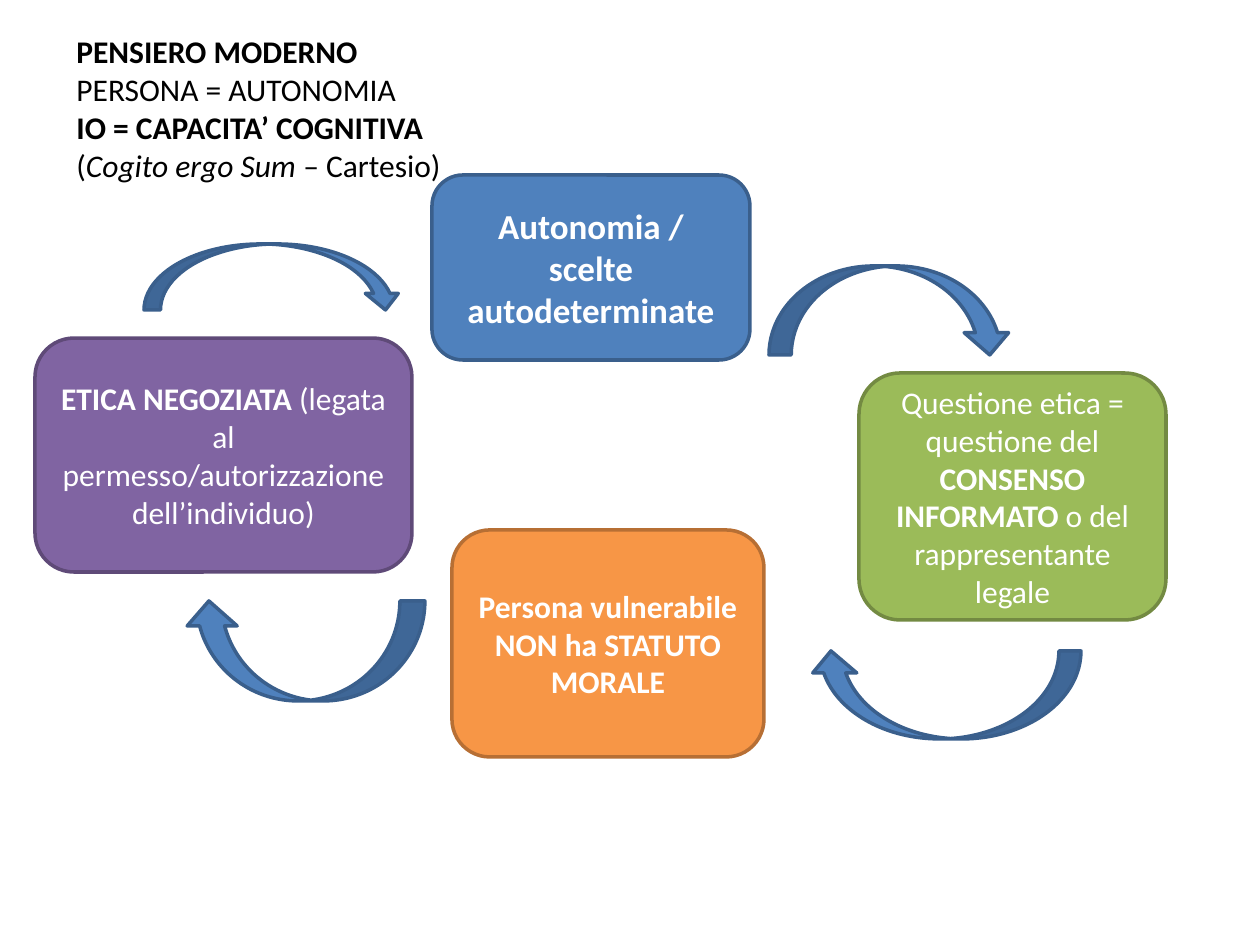
from pptx import Presentation
from pptx.dml.color import RGBColor
from pptx.enum.shapes import MSO_SHAPE as Shape
from pptx.enum.text import MSO_ANCHOR as Anchor, MSO_AUTO_SIZE as AutoSize, PP_ALIGN as Align
from pptx.util import Emu, Inches, Pt

PX = Inches(1) / 126
FONT = "Calibri"
BLACK, WHITE = RGBColor(0, 0, 0), RGBColor(255, 255, 255)
BLUE, DARK_BLUE = RGBColor(0x4F, 0x81, 0xBD), RGBColor(0x3A, 0x5F, 0x8C)
GREEN, DARK_GREEN = RGBColor(0x9B, 0xBB, 0x59), RGBColor(0x73, 0x8A, 0x42)
ORANGE, DARK_ORANGE = RGBColor(0xF7, 0x96, 0x46), RGBColor(0xB7, 0x6F, 0x34)
PURPLE, DARK_PURPLE = RGBColor(0x80, 0x64, 0xA2), RGBColor(0x5F, 0x4A, 0x78)

HEADING_AREA = (64, 26, 446, 165)
HEADING = [
    [("PENSIERO MODERNO", "b")],
    [("PERSONA = AUTONOMIA", "")],
    [("IO = CAPACITA’ COGNITIVA", "b")],
    [("(", ""), ("Cogito ergo Sum ", "i"), ("– Cartesio)", "")],
]
BOXES = [
    ((432, 175, 318, 185), BLUE, DARK_BLUE, 20,
     [("Autonomia / scelte autodeterminate", "b")]),
    ((859, 373, 307, 247), GREEN, DARK_GREEN, 18,
     [("Questione etica = questione del ", ""), ("CONSENSO INFORMATO", "b"),
      (" o del rappresentante legale", "")]),
    ((452, 530, 312, 227), ORANGE, DARK_ORANGE, 18,
     [("Persona vulnerabile NON ha STATUTO MORALE", "b")]),
    ((35, 338, 377, 234), PURPLE, DARK_PURPLE, 18,
     [("ETICA NEGOZIATA ", "b"),
      ("(legata al permesso/autorizzazione dell’individuo)", "")]),
]
TOP_ARROWS = [(144, 244, 258, 66), (769, 266, 243, 89)]
BOTTOM_ARROWS = [(809, 651, 272, 88), (184, 601, 241, 100)]


def scaled(area):
    return [Emu(round(length * PX)) for length in area]


def add_runs(paragraph, runs, size, color):
    for text, style in runs:
        run = paragraph.add_run()
        run.text = text
        font = run.font
        font.name, font.size, font.color.rgb = FONT, Pt(size), color
        font.bold, font.italic = style == "b", style == "i"


def add_filled(slide, kind, area, fill, line):
    shape = slide.shapes.add_shape(kind, *scaled(area))
    shape.shadow.inherit = False
    shape.fill.solid()
    shape.fill.fore_color.rgb = fill
    shape.line.color.rgb = line
    shape.line.width = Pt(2)
    return shape


def add_box(slide, area, fill, line, size, runs):
    frame = add_filled(slide, Shape.ROUNDED_RECTANGLE, area, fill, line).text_frame
    frame.word_wrap = True
    frame.vertical_anchor = Anchor.MIDDLE
    paragraph = frame.paragraphs[0]
    paragraph.alignment = Align.CENTER
    add_runs(paragraph, runs, size, WHITE)


def add_heading(slide):
    frame = slide.shapes.add_textbox(*scaled(HEADING_AREA)).text_frame
    frame.word_wrap = True
    frame.auto_size = AutoSize.SHAPE_TO_FIT_TEXT
    for index, runs in enumerate(HEADING):
        paragraph = frame.add_paragraph() if index else frame.paragraphs[0]
        add_runs(paragraph, runs, 18, BLACK)


def main():
    presentation = Presentation()
    presentation.slide_width, presentation.slide_height = Inches(10), Inches(7.5)
    slide = presentation.slides.add_slide(presentation.slide_layouts[6])
    for box in BOXES:
        add_box(slide, *box)
    add_heading(slide)
    for area in TOP_ARROWS:
        add_filled(slide, Shape.CURVED_DOWN_ARROW, area, BLUE, DARK_BLUE)
    for area in BOTTOM_ARROWS:
        arrow = add_filled(slide, Shape.CURVED_UP_ARROW, area, BLUE, DARK_BLUE)
        arrow.element.spPr.xfrm.set("flipH", "1")
    presentation.save("out.pptx")


if __name__ == "__main__":
    main()
